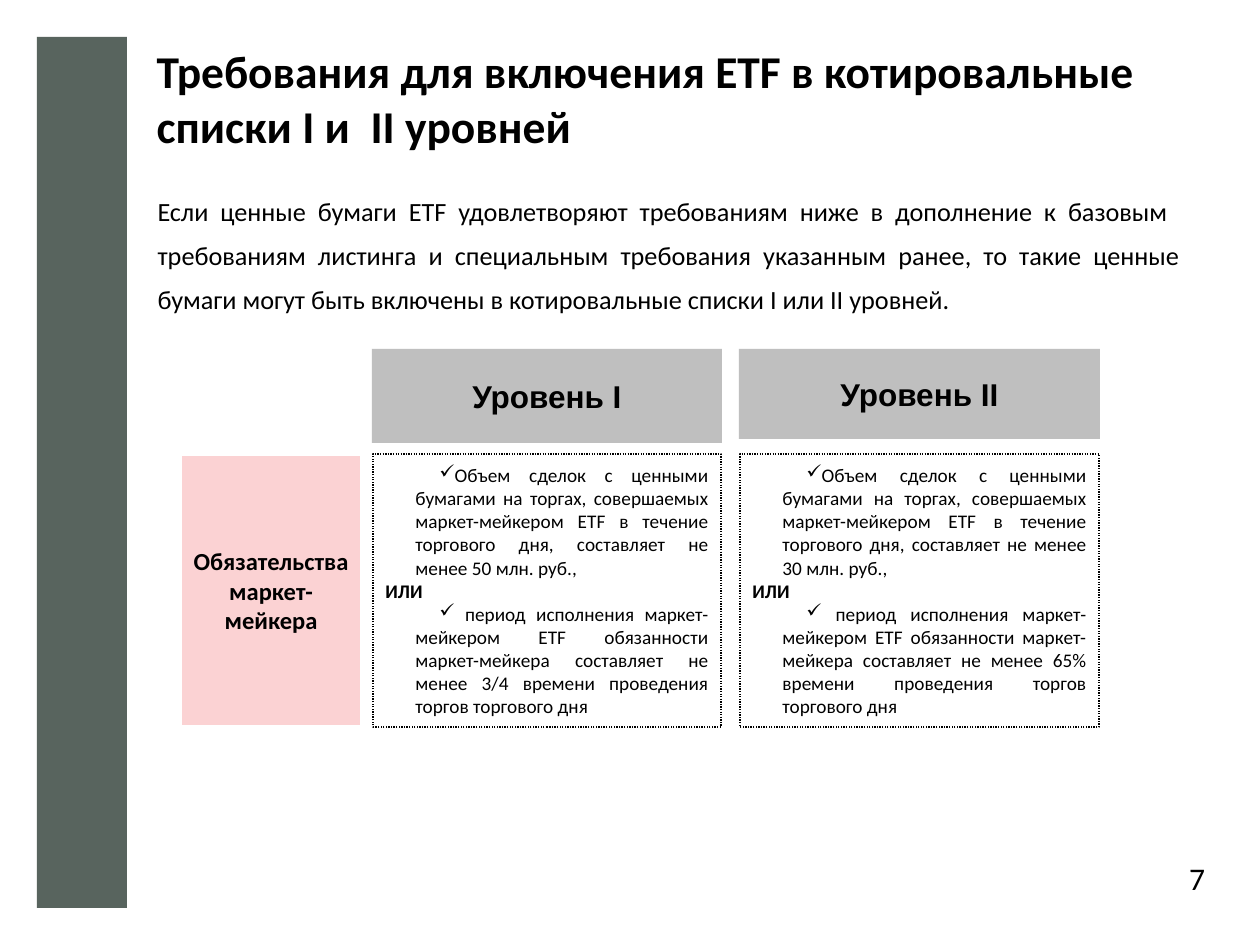
from lxml.etree import SubElement
from pptx import Presentation
from pptx.dml.color import RGBColor
from pptx.enum.dml import MSO_LINE
from pptx.enum.shapes import MSO_SHAPE
from pptx.enum.text import MSO_ANCHOR, MSO_AUTO_SIZE, PP_ALIGN
from pptx.oxml.ns import qn
from pptx.util import Pt

PX = 914400 / 126
COLORS = {"bar": "58645E", "header": "BFBFBF", "duty": "FBD2D3",
          "text": "000000", "white": "FFFFFF"}
LEVELS = [
    # left, width, header height, name, volume, share of trading time
    (372, 350, 94, "Уровень I", "50 млн. руб.,", "3/4 времени"),
    (739, 361, 90, "Уровень II", "30 млн. руб.,", "65% времени"),
]


def px(n):
    return round(n * PX)


def rgb(name):
    return RGBColor.from_string(COLORS[name])


def place(sp, box):
    sp.left, sp.top, sp.width, sp.height = map(px, box)


def set_bullet(p, char=None, left=0, indent=0):
    pPr = p._p.get_or_add_pPr()
    pPr.set("marL", str(px(left)))
    pPr.set("indent", str(px(indent)))
    if char:
        SubElement(pPr, qn("a:buChar")).set("char", char)
    else:
        SubElement(pPr, qn("a:buNone"))


def add_text(tf, text, size, bold=False, align=PP_ALIGN.LEFT, font="Calibri",
             spacing=1.0, bullet=None, left=0, indent=0, new=False):
    """Write one paragraph: the first of the frame, or a new one."""
    p = tf.add_paragraph() if new else tf.paragraphs[0]
    p.alignment = align
    p.line_spacing = spacing
    p.space_before = p.space_after = Pt(0)
    set_bullet(p, bullet, left, indent)
    r = p.add_run()
    r.text = text
    r.font.name, r.font.size, r.font.bold = font, Pt(size), bold
    r.font.color.rgb = rgb("text")


def add_rect(s, box, fill=None, line=None, width=0.75, dash=None):
    sp = s.shapes.add_shape(MSO_SHAPE.RECTANGLE, *map(px, box))
    sp.shadow.inherit = False
    if fill:
        sp.fill.solid()
        sp.fill.fore_color.rgb = rgb(fill)
    else:
        sp.fill.background()
    if line:
        sp.line.color.rgb = rgb(line)
        sp.line.width = Pt(width)
        if dash:
            sp.line.dash_style = dash
    else:
        sp.line.fill.background()
    tf = sp.text_frame
    tf.word_wrap = True
    tf.vertical_anchor = MSO_ANCHOR.MIDDLE
    return tf


def fill_placeholder(sp, box, text, size, **fmt):
    place(sp, box)
    tf = sp.text_frame
    tf.auto_size = MSO_AUTO_SIZE.NONE
    tf.vertical_anchor = MSO_ANCHOR.TOP
    add_text(tf, text, size, **fmt)


def add_level(s, box, header_h, name, volume, share):
    """Grey header with the dotted box of conditions below it."""
    x, y, w, h = box
    add_text(add_rect(s, (x, y, w, header_h), "header"), name, 18,
             bold=True, align=PP_ALIGN.CENTER, font="Arial")
    top = 105
    tf = add_rect(s, (x + 1, y + top, w - 2, h - top), line="text",
                  dash=MSO_LINE.ROUND_DOT)
    item = dict(align=PP_ALIGN.JUSTIFY, bullet="✓", left=30, indent=24)
    add_text(tf, "Объем сделок с ценными бумагами на торгах, совершаемых "
             "маркет-мейкером ETF в течение торгового дня, составляет "
             f"не менее {volume}", 11, **item)
    add_text(tf, "ИЛИ", 11, bold=True, align=PP_ALIGN.JUSTIFY, new=True)
    add_text(tf, " период исполнения маркет-мейкером ETF обязанности "
             f"маркет-мейкера составляет не менее {share} проведения торгов "
             "торгового дня", 11, new=True, **item)


def add_page_number(s, box, number):
    tf = s.shapes.add_textbox(*map(px, box)).text_frame
    tf.word_wrap = True
    tf.margin_right = tf.margin_bottom = 0
    add_text(tf, number, 18, align=PP_ALIGN.RIGHT)


def main():
    prs = Presentation()
    prs.slide_width, prs.slide_height = px(1260), px(945)
    s = prs.slides.add_slide(prs.slide_layouts[1])
    title, body = s.placeholders
    add_rect(s, (37, 37, 90, 871), "bar")
    fill_placeholder(title, (144, 37, 1052, 118),
                     "Требования для включения ETF в котировальные "
                     "списки I и  II уровней", 26, bold=True)
    fill_placeholder(body, (145, 176, 1048, 137),
                     "Если ценные бумаги ETF удовлетворяют требованиям ниже "
                     "в дополнение к базовым  требованиям листинга и "
                     "специальным требования указанным ранее, то такие ценные "
                     "бумаги могут быть включены в котировальные списки "
                     "I или II уровней.", 15,
                     align=PP_ALIGN.JUSTIFY, spacing=1.4)
    add_text(add_rect(s, (180, 454, 182, 273), "duty", "white", 2),
             "Обязательства маркет-мейкера", 14, bold=True,
             align=PP_ALIGN.CENTER)
    for x, w, header_h, *texts in LEVELS:
        add_level(s, (x, 349, w, 378), header_h, *texts)
    add_page_number(s, (1155, 853, 50, 49), "7")
    prs.save("out.pptx")


if __name__ == "__main__":
    main()
